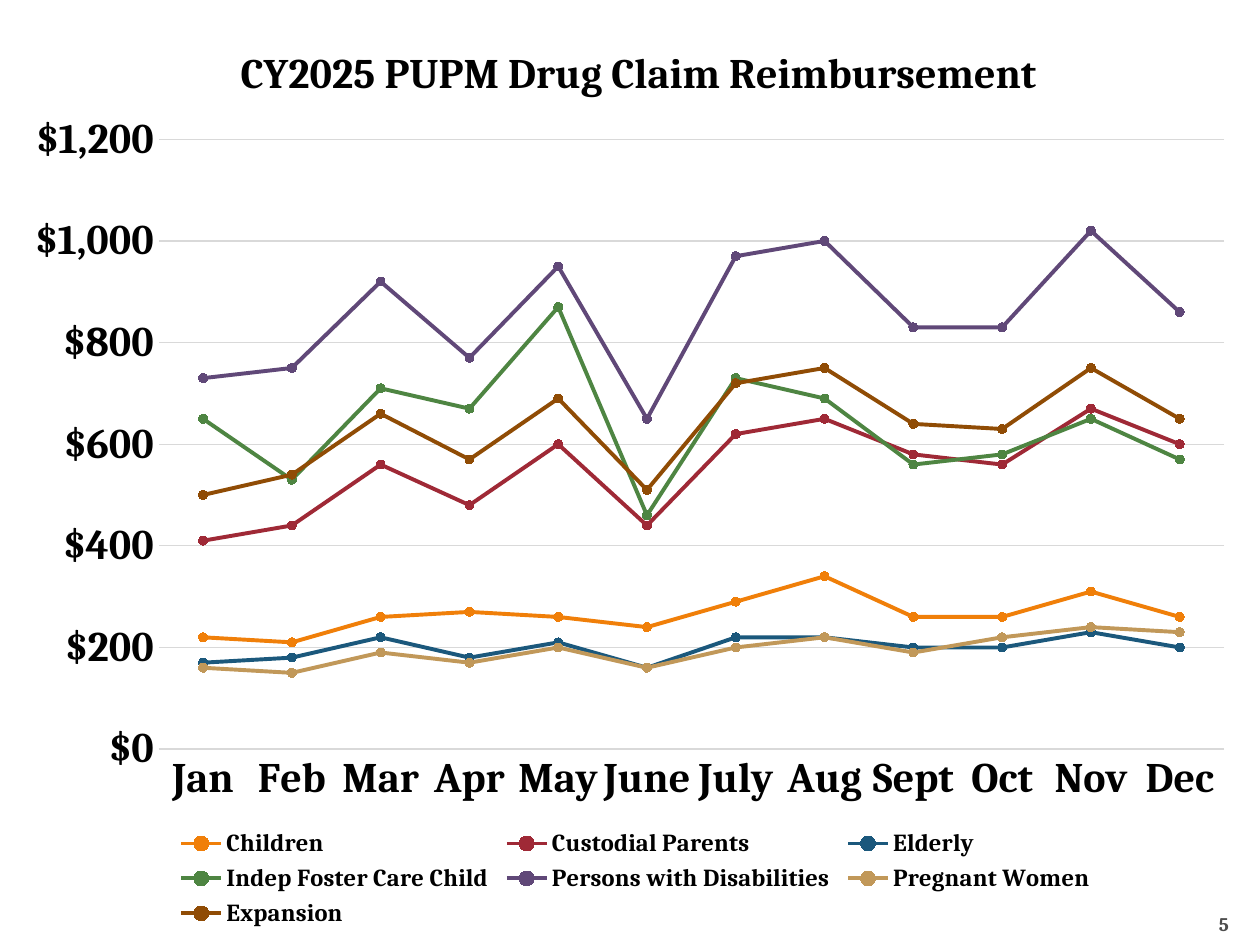
from dataclasses import dataclass

from pptx import Presentation
from pptx.chart.data import CategoryChartData
from pptx.dml.color import RGBColor
from pptx.enum.chart import XL_CHART_TYPE as ChartType
from pptx.enum.chart import XL_LEGEND_POSITION as LegendPosition
from pptx.enum.chart import XL_MARKER_STYLE as Marker
from pptx.enum.chart import XL_TICK_MARK as TickMark
from pptx.enum.text import MSO_ANCHOR as Anchor
from pptx.enum.text import PP_ALIGN as Align
from pptx.oxml import parse_xml
from pptx.oxml.ns import nsdecls
from pptx.util import Pt

EMU_PER_PX = 7257.14

MONTHS = ["Jan", "Feb", "Mar", "Apr", "May", "June",
          "July", "Aug", "Sept", "Oct", "Nov", "Dec"]

REIMBURSEMENT = {
    "Children": [220, 210, 260, 270, 260, 240, 290, 340, 260, 260, 310, 260],
    "Custodial Parents": [410, 440, 560, 480, 600, 440, 620, 650, 580, 560, 670, 600],
    "Elderly": [170, 180, 220, 180, 210, 160, 220, 220, 200, 200, 230, 200],
    "Indep Foster Care Child": [650, 530, 710, 670, 870, 460, 730, 690, 560, 580, 650, 570],
    "Persons with Disabilities": [730, 750, 920, 770, 950, 650, 970, 1000, 830, 830, 1020, 860],
    "Pregnant Women": [160, 150, 190, 170, 200, 160, 200, 220, 190, 220, 240, 230],
    "Expansion": [500, 540, 660, 570, 690, 510, 720, 750, 640, 630, 750, 650],
}


@dataclass(frozen=True)
class Theme:
    font: str = "Cambria"
    text: str = "000000"
    page_number: str = "4D4D4D"
    grid: str = "D9D9D9"
    groups: tuple = ("F07F09", "9F2936", "1B587C", "4E8542",
                     "604878", "C19859", "904C05")
    heading_size: int = 24
    legend_size: int = 14
    page_number_size: int = 11
    grid_width: float = 0.75
    group_width: float = 2.25
    marker_size: int = 5


def px(length):
    return round(length * EMU_PER_PX)


def format_font(font, name, size, color, bold=True):
    font.name = name
    font.size = Pt(size)
    font.bold = bold
    font.color.rgb = RGBColor.from_string(color)


def write(paragraph, text, **style):
    run = paragraph.add_run()
    run.text = text
    format_font(run.font, **style)


def draw_line(line, color, width):
    line.color.rgb = RGBColor.from_string(color)
    line.width = Pt(width)


def place(part, index, target, **fractions):
    for old in part.xpath("c:layout"):
        part.remove(old)
    inner = f'<c:layoutTarget val="{target}"/>' if target else ""
    modes = "".join(f'<c:{side}Mode val="edge"/>' for side in "xy")
    sizes = "".join(f'<c:{key} val="{value}"/>' for key, value in fractions.items())
    part.insert(index, parse_xml(
        f'<c:layout {nsdecls("c")}><c:manualLayout>{inner}{modes}{sizes}'
        '</c:manualLayout></c:layout>'))


class SlideBuilder:
    def __init__(self, slide, theme):
        self.slide = slide
        self.theme = theme

    def page_number(self, text, left, top, width, height):
        theme = self.theme
        frame = self.slide.shapes.add_textbox(
            px(left), px(top), px(width), px(height)).text_frame
        frame.word_wrap = True
        frame.vertical_anchor = Anchor.BOTTOM
        frame.margin_left = frame.margin_right = frame.margin_bottom = 0
        paragraph = frame.paragraphs[0]
        paragraph.alignment = Align.RIGHT
        write(paragraph, text, name=theme.font, size=theme.page_number_size,
              color=theme.page_number)

    def line_chart(self, title, months, groups, left, top, width, height):
        theme = self.theme
        claims = CategoryChartData(number_format='"$"#,##0')
        claims.categories = months
        for group, amounts in groups.items():
            claims.add_series(group, amounts)
        chart = self.slide.shapes.add_chart(
            ChartType.LINE_MARKERS, px(left), px(top), px(width), px(height),
            claims).chart
        heading = dict(name=theme.font, size=theme.heading_size, color=theme.text)
        format_font(chart.font, theme.font, 10, theme.text, bold=False)
        chart.has_title = True
        write(chart.chart_title.text_frame.paragraphs[0], title, **heading)
        self.style_axes(chart, heading)
        self.style_groups(chart.plots[0])
        chart.has_legend = True
        chart.legend.position = LegendPosition.BOTTOM
        chart.legend.include_in_layout = False
        format_font(chart.legend.font, theme.font, theme.legend_size, theme.text)
        body = chart.element.xpath("c:chart")[0]
        place(body.xpath("c:title")[0], 1, None, x=0.18, y=0.03)
        place(body.xpath("c:plotArea")[0], 0, "inner", x=0.12, y=0.14, w=0.86, h=0.66)
        place(body.xpath("c:legend")[0], 1, None, x=0.13, y=0.88, w=0.75, h=0.12)

    def style_axes(self, chart, heading):
        theme = self.theme
        month_axis, dollar_axis = chart.category_axis, chart.value_axis
        for axis in (month_axis, dollar_axis):
            axis.major_tick_mark = axis.minor_tick_mark = TickMark.NONE
            format_font(axis.tick_labels.font, **heading)
        draw_line(month_axis.format.line, theme.grid, theme.grid_width)
        dollar_axis.format.line.fill.background()
        dollar_axis.minimum_scale = 0
        dollar_axis.maximum_scale = 1200
        dollar_axis.major_unit = 200
        dollar_axis.tick_labels.number_format = '"$"#,##0'
        dollar_axis.tick_labels.number_format_is_linked = False
        draw_line(dollar_axis.major_gridlines.format.line, theme.grid, theme.grid_width)

    def style_groups(self, plot):
        theme = self.theme
        plot.vary_by_categories = False
        for group, color in zip(plot.series, theme.groups):
            group.smooth = False
            draw_line(group.format.line, color, theme.group_width)
            group.marker.style = Marker.CIRCLE
            group.marker.size = theme.marker_size
            group.marker.format.fill.solid()
            group.marker.format.fill.fore_color.rgb = RGBColor.from_string(color)
            draw_line(group.marker.format.line, color, theme.grid_width)


def main():
    deck = Presentation()
    deck.slide_width, deck.slide_height = px(1260), px(945)
    builder = SlideBuilder(deck.slides.add_slide(deck.slide_layouts[6]), Theme())
    builder.page_number("5", 1166, 885, 63, 50)
    builder.line_chart("CY2025 PUPM Drug Claim Reimbursement", MONTHS,
                       REIMBURSEMENT, 10, 10, 1239, 924)
    deck.save("out.pptx")


if __name__ == "__main__":
    main()
